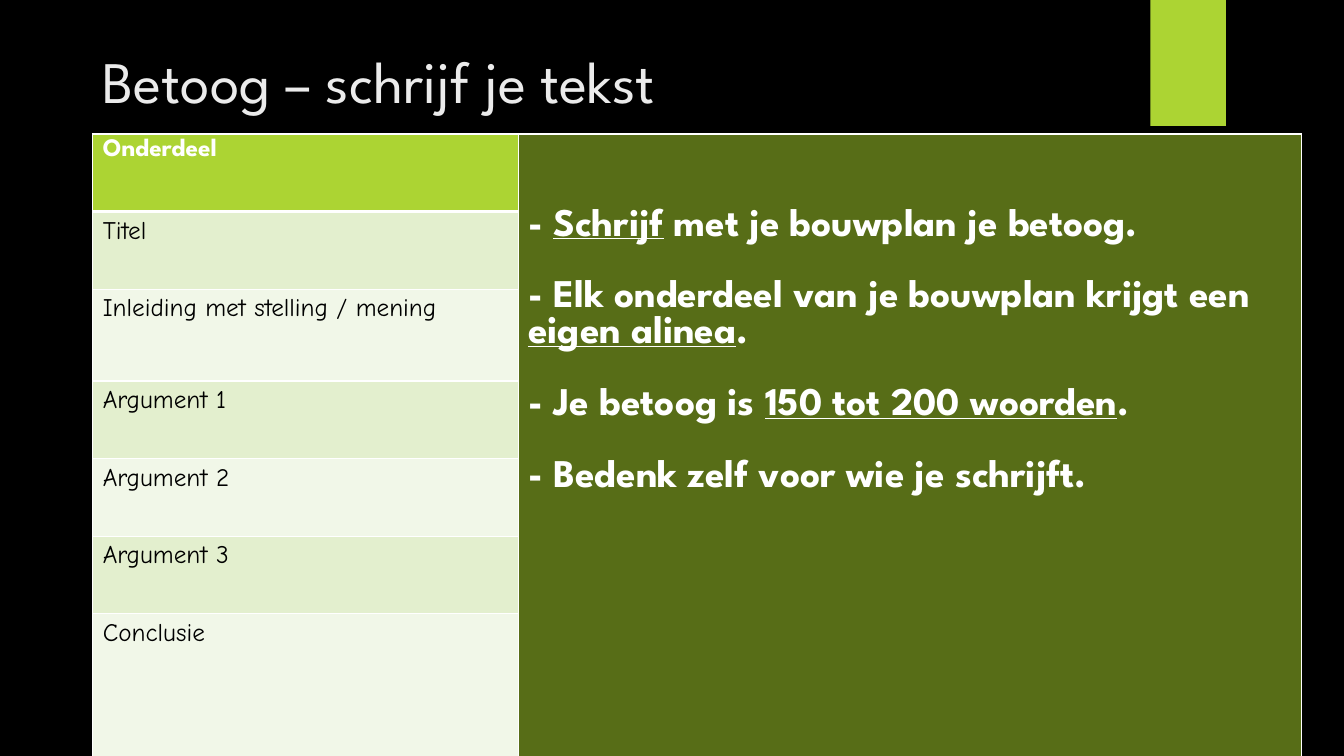
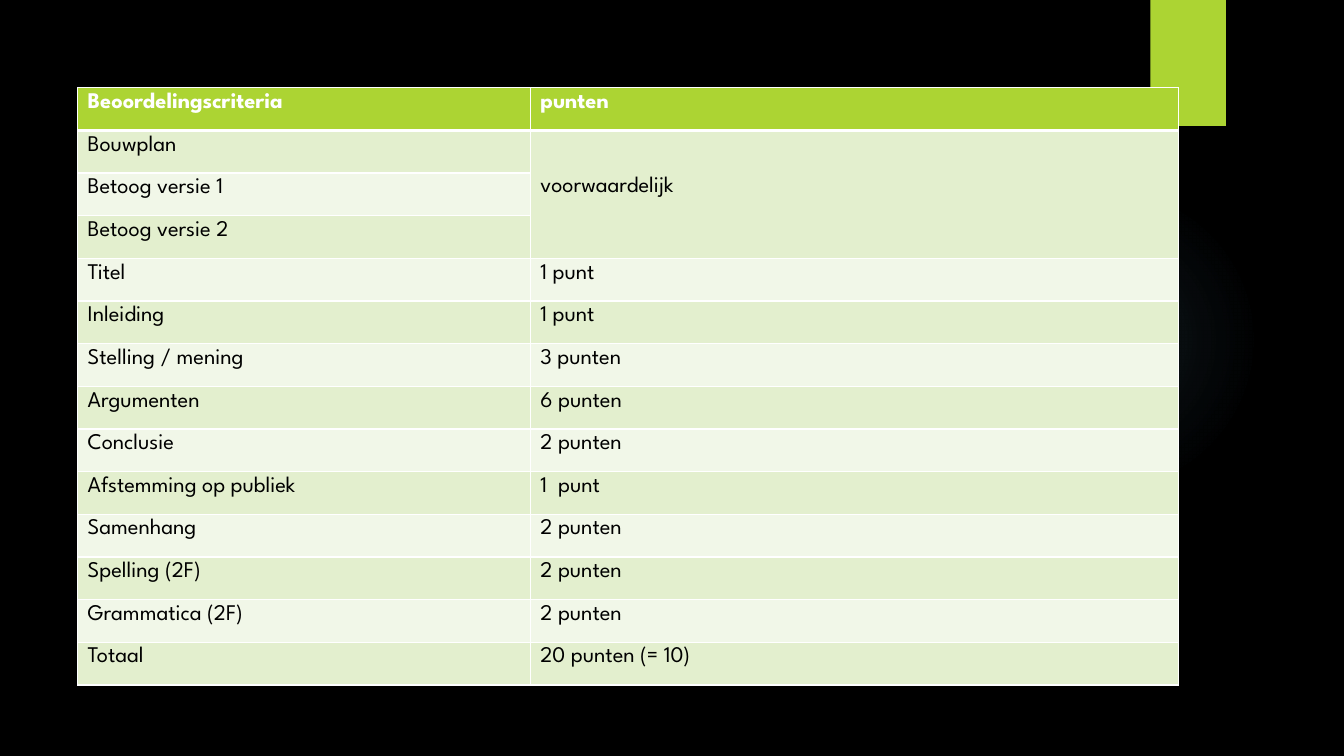
import pptx
import pptx.dml.color
import pptx.enum.shapes
import pptx.enum.text
import pptx.oxml
import pptx.oxml.ns
import pptx.util

Inches = pptx.util.Inches
Pt = pptx.util.Pt


def color(hex_value):
    return pptx.dml.color.RGBColor.from_string(hex_value)


def drawing_xml(markup):
    namespace = pptx.oxml.ns.nsdecls("a")
    return pptx.oxml.parse_xml(markup.replace(" ", f" {namespace} ", 1))


class Style:
    FONT = "League Spartan"
    HAND_FONT = "Comic Neue"
    BLACK = "000000"
    WHITE = "FFFFFF"
    TITLE = "EBEBEB"
    GREEN = "ACD433"
    DARK_GREEN = "576D17"
    GLOW = "7AC4F0"
    BANDS = ("F1F7E8", "E3EFCE")

    def __init__(self):
        self.deck = pptx.Presentation()
        self.deck.slide_width = Inches(13.33)
        self.deck.slide_height = Inches(7.5)
        self.slide = None

    def new_slide(self):
        self.slide = self.deck.slides.add_slide(self.deck.slide_layouts[6])
        background = self.slide.background.fill
        background.solid()
        background.fore_color.rgb = color(self.BLACK)
        self.glow()
        shapes = pptx.enum.shapes.MSO_SHAPE
        self.shape(shapes.RECTANGLE, 11.41, 0, 0.75, 1.25, self.GREEN)

    def shape(self, kind, left, top, width, height, fill):
        shape = self.slide.shapes.add_shape(
            kind, Inches(left), Inches(top), Inches(width), Inches(height))
        shape.shadow.inherit = False
        shape.line.fill.background()
        shape.fill.solid()
        shape.fill.fore_color.rgb = color(fill)
        return shape

    def glow(self):
        circle = self.shape(pptx.enum.shapes.MSO_SHAPE.OVAL,
                            9.41, 1.83, 3.08, 3.08, self.GLOW)
        stops = "".join(
            f'<a:gs pos="{place * 1000}"><a:srgbClr val="{self.GLOW}">'
            f'<a:alpha val="{alpha * 1000}"/></a:srgbClr></a:gs>'
            for place, alpha in ((0, 7), (36, 6), (69, 0)))
        gradient = drawing_xml(
            f'<a:gradFill rotWithShape="1"><a:gsLst>{stops}</a:gsLst>'
            '<a:path path="circle"><a:fillToRect l="50000" t="50000" '
            'r="50000" b="50000"/></a:path></a:gradFill>')
        properties = circle.element.spPr
        solid = properties.find(pptx.oxml.ns.qn("a:solidFill"))
        properties.replace(solid, gradient)

    def title(self, text):
        box = self.slide.shapes.add_textbox(
            Inches(0.92), Inches(0.39), Inches(10), Inches(0.7))
        box.text_frame.word_wrap = True
        paragraph = box.text_frame.paragraphs[0]
        self.add_text(paragraph, text, 42, self.FONT, self.TITLE)

    def add_text(self, paragraph, marked_text, size, font, ink, bold=False):
        for index, part in enumerate(marked_text.split("|")):
            span = paragraph.add_run()
            span.text = part
            span.font.size = Pt(size)
            span.font.name = font
            span.font.color.rgb = color(ink)
            span.font.bold = bold
            if index % 2:
                span.font.underline = True

    def borders(self, cell, top=1, bottom=1):
        widths = {"L": 1, "R": 1, "T": top, "B": bottom}
        properties = cell._tc.get_or_add_tcPr()
        for side, width in widths.items():
            properties.append(drawing_xml(
                f'<a:ln{side} w="{Pt(width)}"><a:solidFill>'
                f'<a:srgbClr val="{self.WHITE}"/></a:solidFill></a:ln{side}>'))

    def paint(self, cell, fill):
        cell.fill.solid()
        cell.fill.fore_color.rgb = color(fill)

    def table(self, left, top, widths, heights, rows, size, body_font, merged):
        frame = self.slide.shapes.add_table(
            len(rows), len(widths), Inches(left), Inches(top),
            Inches(sum(widths)), Inches(sum(heights)))
        table = frame.table
        for column, width in zip(table.columns, widths):
            column.width = Inches(width)
        for row, height in zip(table.rows, heights):
            row.height = Inches(height)
        first, last = merged
        table.cell(first, 1).merge(table.cell(last, 1))
        for row_index, texts in enumerate(rows):
            header = row_index == 0
            for column_index, text in enumerate(texts):
                cell = table.cell(row_index, column_index)
                self.borders(
                    cell,
                    top=3 if row_index == 1 and not cell.is_spanned else 1,
                    bottom=3 if header and not cell.is_merge_origin else 1)
                self.paint(cell, self.GREEN if header
                           else self.BANDS[row_index % 2])
                if text:
                    self.add_text(cell.text_frame.paragraphs[0], text, size,
                                  self.FONT if header else body_font,
                                  self.WHITE if header else self.BLACK, header)
        return table

    def panel(self, cell, lines, size, gap):
        self.paint(cell, self.DARK_GREEN)
        cell.margin_top = Inches(0.74)
        frame = cell.text_frame
        for index, line in enumerate(lines):
            paragraph = frame.add_paragraph() if index else frame.paragraphs[0]
            if index:
                paragraph.space_before = Pt(gap)
            self.add_text(paragraph, line, size, self.FONT, self.WHITE, True)


def writing_slide(style):
    style.new_slide()
    style.title("Betoog – schrijf je tekst")
    parts = ["Onderdeel", "Titel", "Inleiding met stelling / mening",
             "Argument 1", "Argument 2", "Argument 3", "Conclusie"]
    heights = [0.77, 0.77, 0.91, 0.77, 0.77, 0.77, 1.45]
    table = style.table(0.92, 1.33, [4.22, 7.77], heights,
                        [(part, None) for part in parts],
                        18, style.HAND_FONT, (0, len(parts) - 1))
    style.panel(table.cell(0, 1), [
        "- |Schrijf| met je bouwplan je betoog.",
        "- Elk onderdeel van je bouwplan krijgt een |eigen alinea|.",
        "- Je betoog is |150 tot 200 woorden|.",
        "- Bedenk zelf voor wie je schrijft.",
    ], 28, 25.75)


def scoring_slide(style):
    style.new_slide()
    rows = [
        ("Beoordelingscriteria", "punten"),
        ("Bouwplan", "voorwaardelijk"),
        ("Betoog versie 1", None),
        ("Betoog versie 2", None),
        ("Titel", "1 punt"),
        ("Inleiding", "1 punt"),
        ("Stelling / mening", "3 punten"),
        ("Argumenten", "6 punten"),
        ("Conclusie", "2 punten"),
        ("Afstemming op publiek", "1  punt"),
        ("Samenhang", "2 punten"),
        ("Spelling (2F)", "2 punten"),
        ("Grammatica (2F)", "2 punten"),
        ("Totaal", "20 punten (= 10)"),
    ]
    heights = [5.93 / len(rows)] * len(rows)
    table = style.table(0.77, 0.87, [4.49, 6.43], heights, rows,
                        16, style.FONT, (1, 3))
    table.cell(1, 1).margin_top = Inches(0.46)


def main():
    style = Style()
    writing_slide(style)
    scoring_slide(style)
    style.deck.save("out.pptx")


if __name__ == "__main__":
    main()
